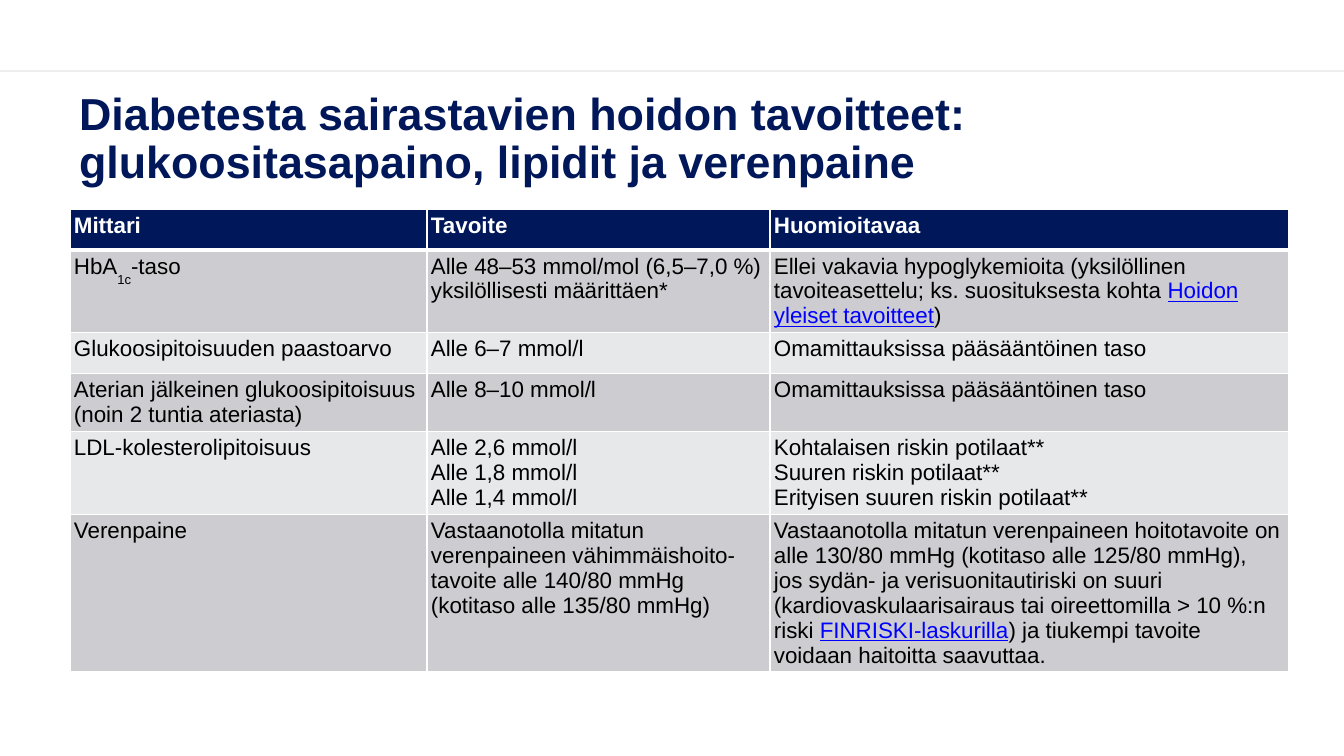
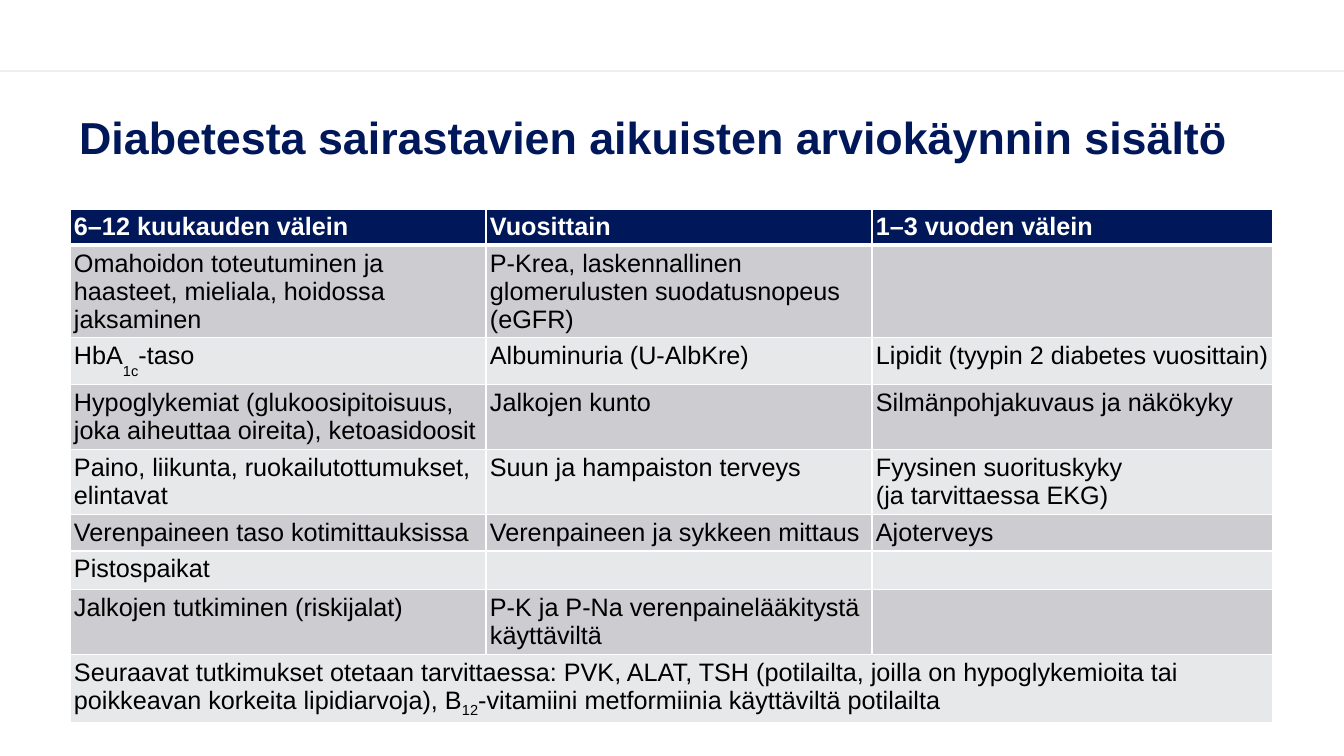
from dataclasses import dataclass

from lxml.etree import SubElement
from pptx import Presentation
from pptx.dml.color import RGBColor
from pptx.enum.shapes import MSO_CONNECTOR
from pptx.enum.text import MSO_ANCHOR, MSO_AUTO_SIZE, PP_ALIGN
from pptx.oxml.ns import qn
from pptx.util import Emu, Pt

NAVY = RGBColor(0x00, 0x17, 0x59)
WHITE = RGBColor(0xFF, 0xFF, 0xFF)
BLACK = RGBColor(0x00, 0x00, 0x00)
LINK_BLUE = RGBColor(0x00, 0x00, 0xFF)
ROW_DARK = RGBColor(0xCC, 0xCC, 0xD1)
ROW_LIGHT = RGBColor(0xE7, 0xE8, 0xEA)

FONT = "Arial"
SLIDE_W, SLIDE_H = 1344, 756
TITLE_BOX = (69, 94, 1203, 92)
TABLE_LEFT, TABLE_TOP = 70, 209
CELL_MARGIN = 4
RULE_Y = 71


def px(count):
    return Emu(round(count * 914400 / 100.8))


@dataclass
class Piece:
    """A stretch of cell text with its own look."""
    text: str
    baseline: int = 0
    link: bool = False


HBA1C = [Piece("HbA"), Piece("1c", baseline=-48), Piece("-taso")]

GOALS = [
    ["Mittari", "Tavoite", "Huomioitavaa"],
    [HBA1C,
     "Alle 48–53 mmol/mol (6,5–7,0 %) yksilöllisesti määrittäen*",
     [Piece("Ellei vakavia hypoglykemioita (yksilöllinen tavoiteasettelu; "
            "ks. suosituksesta kohta "),
      Piece("Hoidon yleiset tavoitteet", link=True), Piece(")")]],
    ["Glukoosipitoisuuden paastoarvo", "Alle 6–7 mmol/l",
     "Omamittauksissa pääsääntöinen taso"],
    ["Aterian jälkeinen glukoosipitoisuus (noin 2 tuntia ateriasta)",
     "Alle 8–10 mmol/l", "Omamittauksissa pääsääntöinen taso"],
    ["LDL-kolesterolipitoisuus",
     "Alle 2,6 mmol/l\nAlle 1,8 mmol/l\nAlle 1,4 mmol/l",
     "Kohtalaisen riskin potilaat**\nSuuren riskin potilaat**\n"
     "Erityisen suuren riskin potilaat**"],
    ["Verenpaine",
     "Vastaanotolla mitatun verenpaineen vähimmäishoito-tavoite alle "
     "140/80 mmHg\n(kotitaso alle 135/80 mmHg)",
     [Piece("Vastaanotolla mitatun verenpaineen hoitotavoite on alle 130/80 "
            "mmHg (kotitaso alle 125/80 mmHg),\njos sydän- ja "
            "verisuonitautiriski on suuri (kardiovaskulaarisairaus tai "
            "oireettomilla > 10 %:n riski "),
      Piece("FINRISKI-laskurilla", link=True),
      Piece(") ja tiukempi tavoite voidaan haitoitta saavuttaa.")]],
]

VISITS = [
    ["6–12 kuukauden välein", "Vuosittain", "1–3 vuoden välein"],
    ["Omahoidon toteutuminen ja haasteet, mieliala, hoidossa jaksaminen",
     "P-Krea, laskennallinen glomerulusten suodatusnopeus (eGFR)", ""],
    [HBA1C, "Albuminuria (U-AlbKre)", "Lipidit (tyypin 2 diabetes vuosittain)"],
    ["Hypoglykemiat (glukoosipitoisuus, joka aiheuttaa oireita), ketoasidoosit",
     "Jalkojen kunto", "Silmänpohjakuvaus ja näkökyky"],
    ["Paino, liikunta, ruokailutottumukset, elintavat",
     "Suun ja hampaiston terveys",
     "Fyysinen suorituskyky\n(ja tarvittaessa EKG)"],
    ["Verenpaineen taso kotimittauksissa", "Verenpaineen ja sykkeen mittaus",
     "Ajoterveys"],
    ["Pistospaikat", "", ""],
    ["Jalkojen tutkiminen (riskijalat)",
     "P-K ja P-Na verenpainelääkitystä käyttäviltä", ""],
    # A row with a single entry spans the whole table
    [[Piece("Seuraavat tutkimukset otetaan tarvittaessa: PVK, ALAT, TSH "
            "(potilailta, joilla on hypoglykemioita tai poikkeavan korkeita "
            "lipidiarvoja), B"),
      Piece("12", baseline=-25),
      Piece("-vitamiini metformiinia käyttäviltä potilailta")]],
]


def style_layout(layout):
    """Title place and alignment shared by the slides."""
    title = next(iter(layout.placeholders))
    title.left, title.top, title.width, title.height = map(px, TITLE_BOX)
    frame = title.text_frame
    frame.vertical_anchor = MSO_ANCHOR.MIDDLE
    frame.auto_size = MSO_AUTO_SIZE.NONE
    frame.word_wrap = True


def add_master_rule(master, slide):
    """Faint rule across the top, moved from the slide to the master."""
    rule = slide.shapes.add_connector(
        MSO_CONNECTOR.STRAIGHT, 0, px(RULE_Y), px(SLIDE_W), px(RULE_Y))
    rule.line.color.rgb = BLACK
    rule.line.width = Pt(1)
    color = rule.line.fill._xPr.find(".//" + qn("a:srgbClr"))
    SubElement(color, qn("a:alpha"), val="10000")
    SubElement(rule.element.spPr, qn("a:effectLst"))
    rule.element.nvCxnSpPr.cNvPr.set("id", "99")
    master.shapes.element.append(rule.element)


def write_title(slide, text):
    title = slide.shapes.title
    title.text_frame.text = text
    paragraph = title.text_frame.paragraphs[0]
    paragraph.alignment = PP_ALIGN.LEFT
    paragraph.line_spacing = 0.9
    font = paragraph.runs[0].font
    font.name, font.size, font.bold = FONT, Pt(32), True
    font.color.rgb = NAVY


def set_borders(cell, top, bottom):
    """White cell borders; top and bottom widths in points."""
    properties = cell._tc.get_or_add_tcPr()
    for side, width in (("L", 1), ("R", 1), ("T", top), ("B", bottom)):
        edge = SubElement(properties, qn(f"a:ln{side}"), w=str(Pt(width)))
        fill = SubElement(edge, qn("a:solidFill"))
        SubElement(fill, qn("a:srgbClr"), val=str(WHITE))


def write_cell(cell, content, size, header):
    pieces = [Piece(content)] if isinstance(content, str) else content
    paragraph = cell.text_frame.paragraphs[0]
    paragraph.font.size = Pt(size)
    for piece in pieces:
        for number, line in enumerate(piece.text.split("\n")):
            if number:
                paragraph.add_line_break()
            if not line:
                continue
            run = paragraph.add_run()
            run.text = line
            font = run.font
            font.name, font.size, font.bold = FONT, Pt(size), header
            font.color.rgb = (WHITE if header else
                              LINK_BLUE if piece.link else BLACK)
            if piece.link:
                font.underline = True
            if piece.baseline:
                font._element.set("baseline", str(piece.baseline * 1000))


def add_grid(slide, left, top, widths, heights, rows, size):
    """Table with a navy header and banded rows."""
    table = slide.shapes.add_table(
        len(rows), len(widths), px(left), px(top),
        px(sum(widths)), px(sum(heights))).table
    for column, width in zip(table.columns, widths):
        column.width = px(width)
    for index, (row, height, contents) in enumerate(
            zip(table.rows, heights, rows)):
        row.height = px(height)
        header = index == 0
        if len(contents) == 1:
            table.cell(index, 0).merge(table.cell(index, len(widths) - 1))
        for cell in row.cells:
            cell.margin_left = cell.margin_right = px(CELL_MARGIN)
            cell.margin_top = cell.margin_bottom = px(CELL_MARGIN)
            set_borders(cell, 3 if index == 1 else 1, 3 if header else 1)
            cell.fill.solid()
            cell.fill.fore_color.rgb = (
                NAVY if header else ROW_DARK if index % 2 else ROW_LIGHT)
        for cell, content in zip(row.cells, contents):
            write_cell(cell, content, size, header)


def add_table_slide(prs, layout, title, widths, heights, rows, size):
    slide = prs.slides.add_slide(layout)
    write_title(slide, title)
    add_grid(slide, TABLE_LEFT, TABLE_TOP, widths, heights, rows, size)
    return slide


def main():
    prs = Presentation()
    prs.slide_width, prs.slide_height = px(SLIDE_W), px(SLIDE_H)
    layout = prs.slide_layouts[5]
    style_layout(layout)

    # Treatment goals
    goals = add_table_slide(
        prs, layout,
        "Diabetesta sairastavien hoidon tavoitteet: "
        "glukoositasapaino, lipidit ja verenpaine",
        (357, 343, 519), (41, 82, 41, 58, 83, 157), GOALS, 16)
    add_master_rule(prs.slide_master, goals)

    # Content of the check-up visits
    add_table_slide(
        prs, layout, "Diabetesta sairastavien aikuisten arviokäynnin sisältö",
        (416, 386, 401), (36, 92, 47, 65, 65, 36, 37, 65, 68), VISITS, 18)

    prs.save("out.pptx")


if __name__ == "__main__":
    main()
